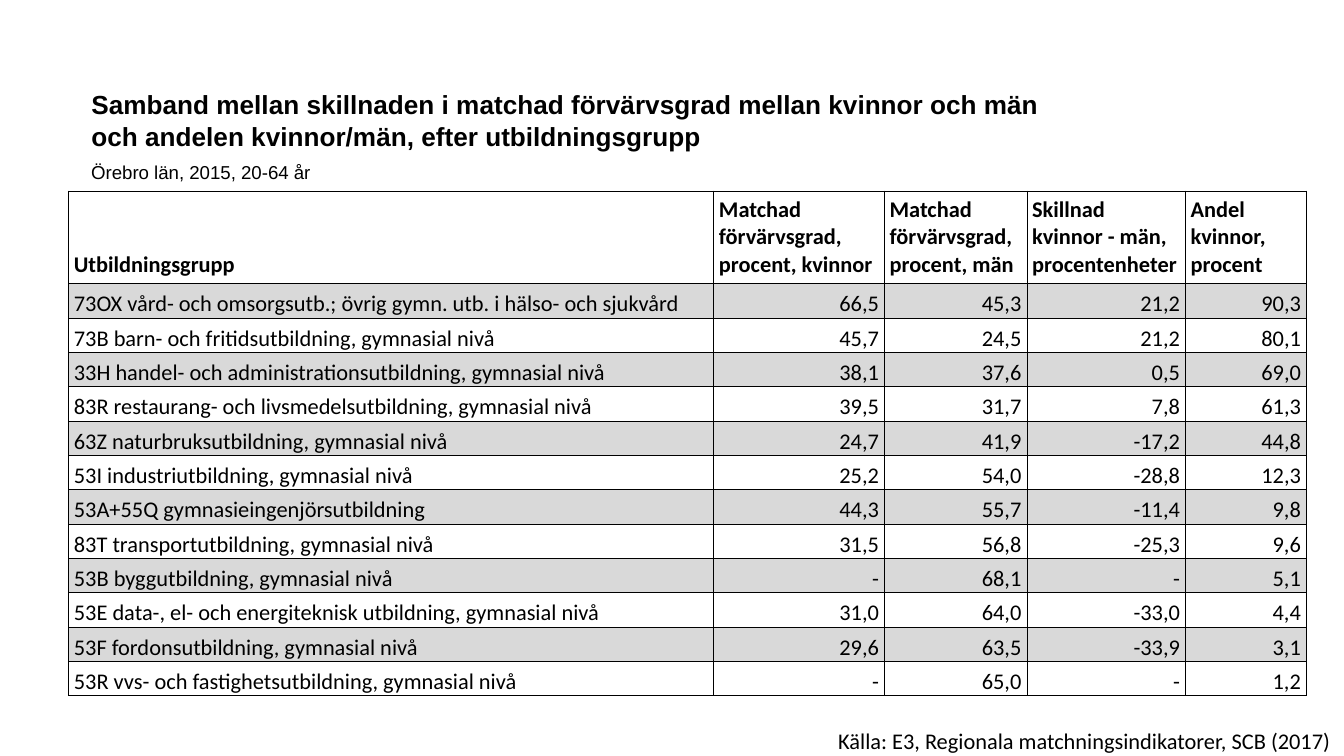
from pptx import Presentation
from pptx.dml.color import RGBColor
from pptx.enum.text import MSO_ANCHOR, MSO_AUTO_SIZE, PP_ALIGN
from pptx.oxml import parse_xml
from pptx.oxml.ns import nsdecls
from pptx.util import Inches, Pt

BLACK = RGBColor(0x00, 0x00, 0x00)
BAND_GREY = RGBColor(0xD9, 0xD9, 0xD9)

HEADERS = [
    "Utbildningsgrupp",
    "Matchad förvärvsgrad, procent, kvinnor",
    "Matchad förvärvsgrad, procent, män",
    "Skillnad kvinnor - män, procentenheter",
    "Andel kvinnor, procent",
]
GROUPS = [
    ("73OX vård- och omsorgsutb.; övrig gymn. utb. i hälso- och sjukvård",
     "66,5", "45,3", "21,2", "90,3"),
    ("73B barn- och fritidsutbildning, gymnasial nivå", "45,7", "24,5", "21,2", "80,1"),
    ("33H handel- och administrationsutbildning, gymnasial nivå",
     "38,1", "37,6", "0,5", "69,0"),
    ("83R restaurang- och livsmedelsutbildning, gymnasial nivå",
     "39,5", "31,7", "7,8", "61,3"),
    ("63Z naturbruksutbildning, gymnasial nivå", "24,7", "41,9", "-17,2", "44,8"),
    ("53I industriutbildning, gymnasial nivå", "25,2", "54,0", "-28,8", "12,3"),
    ("53A+55Q gymnasieingenjörsutbildning", "44,3", "55,7", "-11,4", "9,8"),
    ("83T transportutbildning, gymnasial nivå", "31,5", "56,8", "-25,3", "9,6"),
    ("53B byggutbildning, gymnasial nivå", "-", "68,1", "-", "5,1"),
    ("53E data-, el- och energiteknisk utbildning, gymnasial nivå",
     "31,0", "64,0", "-33,0", "4,4"),
    ("53F fordonsutbildning, gymnasial nivå", "29,6", "63,5", "-33,9", "3,1"),
    ("53R vvs- och fastighetsutbildning, gymnasial nivå", "-", "65,0", "-", "1,2"),
]
COLUMN_WIDTHS = [4.8, 1.27, 1.06, 1.18, 0.9]
TABLE_HEIGHT = 3.75
HEADER_HEIGHT = 0.68


class PageBuilder:
    """Holds the style and the slide being filled."""

    heading_font = "Arial"
    body_font = "Calibri"
    cell_margin = Inches(0.04)
    border_width = Pt(0.25)

    def __init__(self, page):
        self.page = page

    def style(self, para, font_name, size, bold=False, align=PP_ALIGN.LEFT):
        para.alignment = align
        font = para.font
        font.name, font.size, font.bold = font_name, Pt(size), bold
        font.color.rgb = BLACK

    def title(self, text, left, top, width, height):
        box = self.page.shapes.title
        box.left, box.top = Inches(left), Inches(top)
        box.width, box.height = Inches(width), Inches(height)
        frame = box.text_frame
        frame.text = text
        frame.word_wrap = True
        frame.auto_size = MSO_AUTO_SIZE.NONE
        frame.vertical_anchor = MSO_ANCHOR.TOP
        self.style(frame.paragraphs[0], self.heading_font, 14, bold=True)

    def text(self, text, left, top, width, height, font_name, size, align=PP_ALIGN.LEFT):
        box = self.page.shapes.add_textbox(
            Inches(left), Inches(top), Inches(width), Inches(height))
        frame = box.text_frame
        frame.text = text
        frame.word_wrap = True
        self.style(frame.paragraphs[0], font_name, size, align=align)

    def borders(self, cell):
        properties = cell._tc.get_or_add_tcPr()
        for index, side in enumerate(("lnL", "lnR", "lnT", "lnB")):
            properties.insert(index, parse_xml(
                f'<a:{side} {nsdecls("a")} w="{self.border_width}"><a:solidFill>'
                f'<a:srgbClr val="{BLACK}"/></a:solidFill></a:{side}>'))

    def cell(self, cell, text, is_header, is_banded, align):
        cell.text = text
        cell.vertical_anchor = MSO_ANCHOR.BOTTOM
        cell.margin_left = cell.margin_right = cell.margin_top = self.cell_margin
        cell.margin_bottom = self.cell_margin if is_header else 0
        self.style(cell.text_frame.paragraphs[0], self.body_font, 12, is_header, align)
        if is_banded:
            cell.fill.solid()
            cell.fill.fore_color.rgb = BAND_GREY
        else:
            cell.fill.background()
        self.borders(cell)

    def table(self, rows, left, top):
        table = self.page.shapes.add_table(
            len(rows), len(COLUMN_WIDTHS), Inches(left), Inches(top),
            Inches(sum(COLUMN_WIDTHS)), Inches(TABLE_HEIGHT)).table
        for column, width in zip(table.columns, COLUMN_WIDTHS):
            column.width = Inches(width)
        body_height = (TABLE_HEIGHT - HEADER_HEIGHT) / (len(rows) - 1)
        for r, values in enumerate(rows):
            is_header = r == 0
            table.rows[r].height = Inches(HEADER_HEIGHT if is_header else body_height)
            for c, value in enumerate(values):
                align = PP_ALIGN.LEFT if is_header or c == 0 else PP_ALIGN.RIGHT
                self.cell(table.cell(r, c), value, is_header, r % 2 == 1, align)


def main():
    # Widescreen page, 16:9
    deck = Presentation()
    deck.slide_width = Inches(10)
    deck.slide_height = deck.slide_width * 9 // 16
    builder = PageBuilder(deck.slides.add_slide(deck.slide_layouts[5]))

    # Heading
    builder.title(
        "Samband mellan skillnaden i matchad förvärvsgrad mellan kvinnor och män "
        "och andelen kvinnor/män, efter utbildningsgrupp", 0.58, 0.61, 7.52, 1.18)

    # Education groups
    builder.table([HEADERS, *GROUPS], 0.51, 1.42)

    # Scope and source
    builder.text("Örebro län, 2015, 20-64 år", 0.58, 1.15, 1.92, 0.27,
                 builder.heading_font, 10)
    builder.text("Källa: E3, Regionala matchningsindikatorer, SCB (2017)",
                 6.11, 5.36, 3.89, 0.26, builder.body_font, 12, PP_ALIGN.RIGHT)

    deck.save("out.pptx")


if __name__ == "__main__":
    main()
